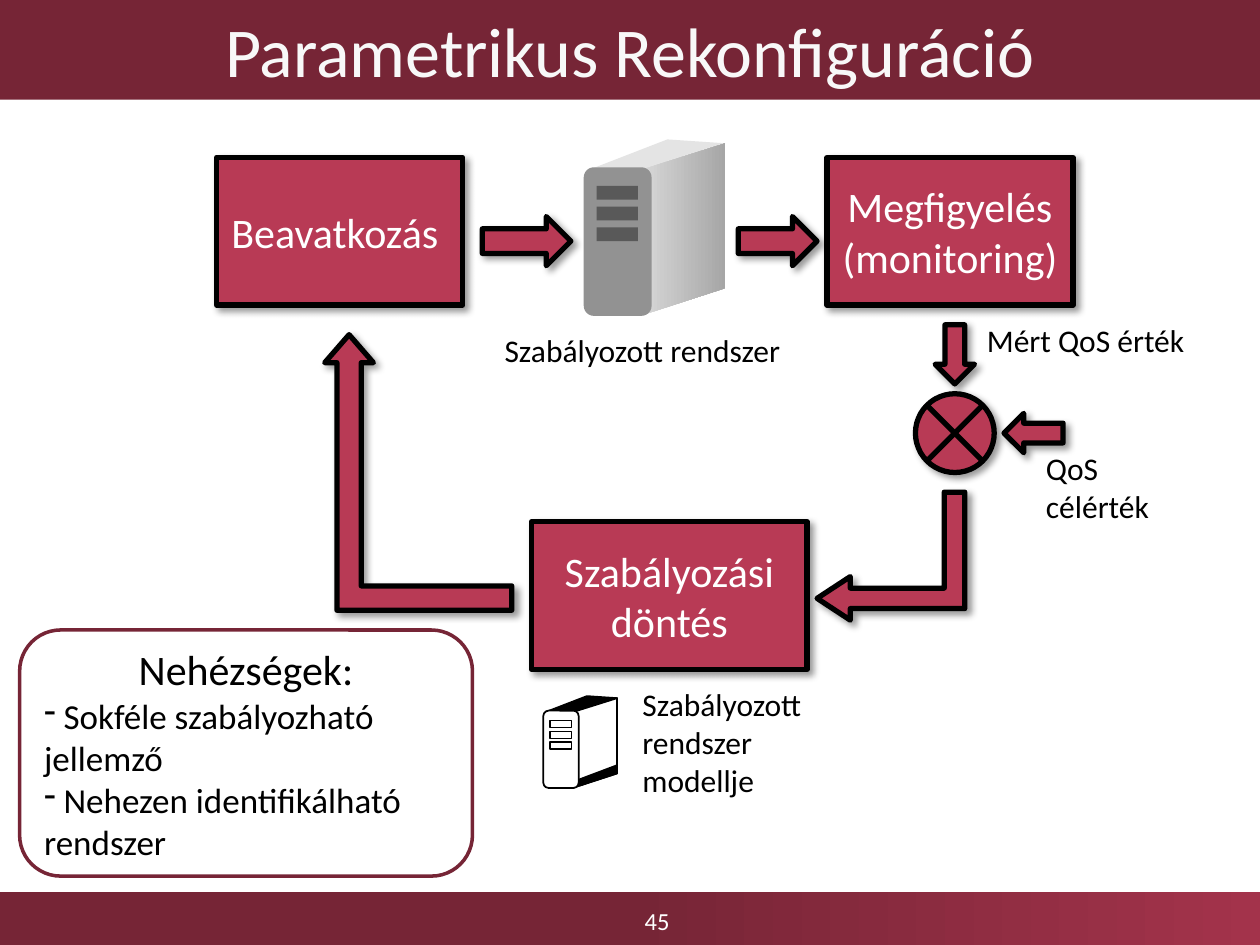
from lxml import etree
from pptx import Presentation, util as u
from pptx.dml import color
from pptx.enum import shapes, text
from pptx.oxml import ns

COLUMNS = 64
WIDTH, HEIGHT = u.Inches(10), u.Inches(7.5)
MAROON, CRIMSON, BLACK, WHITE = "762536", "B83A55", "000000", "FFFFFF"
KIND = shapes.MSO_SHAPE
CENTER = text.PP_ALIGN.CENTER


def grid(*cells):
    """Turn grid units into slide lengths."""
    return [round(cell * WIDTH / COLUMNS) for cell in cells]


def rgb(code):
    """Return the colour of a hex string."""
    return color.RGBColor.from_string(code)


def paint(shape, fill, line=None, weight=1):
    """Give a shape a flat fill and an optional outline."""
    shape.shadow.inherit = False
    shape.fill.solid()
    shape.fill.fore_color.rgb = rgb(fill)
    if line:
        shape.line.color.rgb = rgb(line)
        shape.line.width = u.Pt(weight)
    else:
        shape.line.fill.background()


def blend(shape, first, last, angle, start=0):
    """Fill a shape with a linear gradient."""
    shape.fill.gradient()
    shape.fill.gradient_angle = angle
    for stop, code, position in zip(shape.fill.gradient_stops, (first, last), (start, 1)):
        stop.color.rgb = rgb(code)
        stop.position = position


def cast_shadow(shape):
    """Add a soft shadow to the lower right."""
    effects = shape._element.spPr.find(ns.qn("a:effectLst"))
    outer = etree.SubElement(effects, ns.qn("a:outerShdw"), blurRad=str(u.Pt(4)),
                             dist=str(u.Pt(3)), dir="2700000", algn="tl", rotWithShape="0")
    tint = etree.SubElement(outer, ns.qn("a:srgbClr"), val=BLACK)
    etree.SubElement(tint, ns.qn("a:alpha"), val="40000")


def style(paragraph, size, code, align=None):
    """Set the font and alignment of a paragraph."""
    paragraph.alignment = align
    paragraph.font.size = u.Pt(size)
    paragraph.font.name = "Calibri"
    paragraph.font.color.rgb = rgb(code)


def write(frame, words, size, code, align=None, anchor=text.MSO_ANCHOR.MIDDLE, wrap=True):
    """Fill a text frame with evenly styled paragraphs."""
    frame.text = words
    frame.word_wrap = wrap
    frame.vertical_anchor = anchor
    for paragraph in frame.paragraphs:
        style(paragraph, size, code, align)


def block(slide, kind, place, words="", adjustments=(), rotation=0, flip=False):
    """Draw a crimson box or arrow of the control loop."""
    part = slide.shapes.add_shape(kind, *grid(*place))
    paint(part, CRIMSON, BLACK, 3)
    cast_shadow(part)
    for index, value in enumerate(adjustments):
        part.adjustments[index] = value
    part.rotation = rotation
    if flip:
        part._element.spPr.xfrm.set("flipH", "1")
    if words:
        write(part.text_frame, words, 24, WHITE, CENTER)


def label(slide, place, words):
    """Write a black caption."""
    caption = slide.shapes.add_textbox(*grid(*place))
    write(caption.text_frame, words, 18, BLACK, anchor=text.MSO_ANCHOR.TOP, wrap=False)


def face(slide, points, fill, line):
    """Draw one slanted face of a server."""
    corners = [grid(*point) for point in points]
    builder = slide.shapes.build_freeform(*corners[0], scale=1.0)
    builder.add_line_segments(corners[1:], close=True)
    shape = builder.convert_to_shape()
    paint(shape, fill, line)
    return shape


def server(slide, left, top, scale, front, roof, side, slot, line=None, base=None):
    """Draw a server tower in depth and return its side face."""
    def at(x, y):
        return left + x * scale, top + y * scale

    wide, tall, deep, rise = 3.45, 7.55, 3.75, 1.42
    far = wide + deep
    face(slide, [at(0.2, 0.15), at(deep + 0.5, -rise), at(far, 0.2 - rise), at(wide, 0.2)],
         roof, line)
    flank = face(slide, [at(wide - 0.6, 0.15), at(far, 0.2 - rise), at(far, tall - rise),
                         at(wide - 0.6, tall)], side, line)
    if base:
        face(slide, [at(wide - 0.6, tall), at(wide, tall - 0.8), at(far, tall - 0.8 - rise),
                     at(far, tall - rise)], base, line)
    panel = slide.shapes.add_shape(KIND.ROUNDED_RECTANGLE, *grid(left, top, wide * scale, tall * scale))
    panel.adjustments[0] = 0.15
    paint(panel, front, line)
    for row in range(3):
        bay = slide.shapes.add_shape(
            KIND.RECTANGLE, *grid(*at(0.65, 0.95 + 1.05 * row), 2.1 * scale, 0.7 * scale))
        paint(bay, slot, line, 0.75)
    return flank


def difficulties(slide):
    """Draw the rounded box that lists the difficulties."""
    box = slide.shapes.add_shape(KIND.ROUNDED_RECTANGLE, *grid(1, 32, 23, 12.5))
    paint(box, WHITE, MAROON, 2)
    frame = box.text_frame
    write(frame, "Nehézségek:", 24, BLACK, CENTER)
    for item in (" Sokféle szabályozható jellemző", " Nehezen identifikálható rendszer"):
        paragraph = frame.add_paragraph()
        paragraph.text = item
        etree.SubElement(paragraph._p.get_or_add_pPr(), ns.qn("a:buChar"), char="-")
        style(paragraph, 20, BLACK, text.PP_ALIGN.LEFT)


def bars(slide):
    """Set the title bar and the footer with its page number."""
    footer = slide.shapes.add_shape(KIND.RECTANGLE, 0, u.Inches(7.08), WIDTH, u.Inches(0.42))
    paint(footer, MAROON)
    blend(footer, MAROON, "A3334B", 0, 0.5)
    number = slide.shapes.add_textbox(*[u.Inches(n) for n in (3.59, 7.11, 3.25, 0.39)])
    write(number.text_frame, "45", 14, WHITE, CENTER)
    title = slide.shapes.title
    title.left, title.top, title.width, title.height = 0, 0, WIDTH, u.Inches(0.79)
    title.fill.solid()
    title.fill.fore_color.rgb = rgb(MAROON)
    write(title.text_frame, "Parametrikus Rekonfiguráció", 40, "F8F8F8", CENTER)


def control_loop(slide):
    """Draw the boxes, arrows and captions of the loop."""
    block(slide, KIND.RECTANGLE, (42, 8, 12.5, 7.5), "Megfigyelés (monitoring)")
    block(slide, KIND.RECTANGLE, (11, 8, 12.5, 7.5), "Beavatkozás ")
    block(slide, KIND.RECTANGLE, (27, 26.5, 14, 7.5), "Szabályozási döntés")
    block(slide, KIND.RIGHT_ARROW, (24.5, 11, 4.5, 2.5))
    block(slide, KIND.RIGHT_ARROW, (37.5, 11, 4, 2.5))
    block(slide, KIND.FLOWCHART_SUMMING_JUNCTION, (46.5, 20, 4, 4))
    block(slide, KIND.DOWN_ARROW, (47.5, 16.5, 2, 3))
    block(slide, KIND.RIGHT_ARROW, (51, 21, 3, 2), flip=True)
    block(slide, KIND.BENT_UP_ARROW, (42, 24.5, 6.5, 7.5), adjustments=(0.16, 0.17, 0.26),
          rotation=270, flip=True)
    block(slide, KIND.BENT_UP_ARROW, (16.5, 17, 9.5, 14), adjustments=(0.13, 0.13, 0.15),
          flip=True)
    label(slide, (25, 16.5, 15.5, 2.5), "Szabályozott rendszer")
    label(slide, (52.5, 22.5, 9.5, 2.5), "QoS célérték")
    label(slide, (49.5, 16, 11.5, 2.5), "Mért QoS érték")
    label(slide, (32, 34.5, 10, 6.5), "Szabályozott \vrendszer\nmodellje")


def main():
    """Build the slide and save it."""
    deck = Presentation()
    deck.slide_width, deck.slide_height = WIDTH, HEIGHT
    slide = deck.slides.add_slide(deck.slide_layouts[5])
    bars(slide)
    flank = server(slide, 29.65, 8.5, 1, "929292", "E4E4E4", "C0C0C0", "595959")
    blend(flank, "D9D9D9", "A6A6A6", 0)
    control_loop(slide)
    difficulties(slide)
    server(slide, 27.6, 36.1, 0.52, WHITE, BLACK, WHITE, WHITE, BLACK, BLACK)
    deck.save("out.pptx")


if __name__ == "__main__":
    main()
